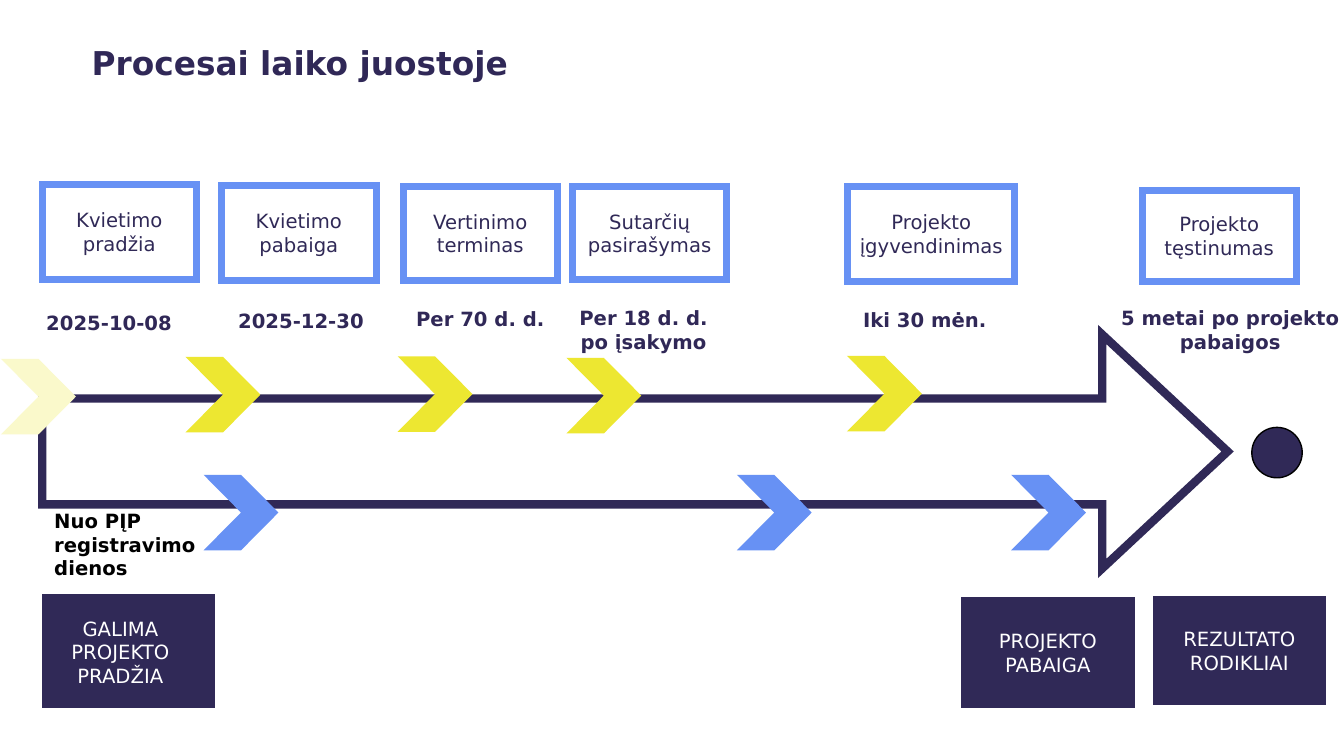
from dataclasses import dataclass

import pptx
import pptx.dml.color
import pptx.enum.shapes
import pptx.enum.text
import pptx.oxml
import pptx.oxml.ns
import pptx.util

Pt = pptx.util.Pt
SHAPES = pptx.enum.shapes.MSO_SHAPE
ALIGN = pptx.enum.text.PP_ALIGN
ANCHOR = pptx.enum.text.MSO_ANCHOR
FONT = "DejaVu Sans"
COLORS = {
    "navy": "302957",
    "ink": "302857",
    "blue": "6791F4",
    "yellow": "EDE731",
    "pale": "FAF9CB",
    "white": "FFFFFF",
    "black": "000000",
}
CHEVRON_WIDTH, CHEVRON_HEIGHT = 53.5, 54


@dataclass
class Box:
    text: str
    left: float
    top: float
    width: float
    height: float


@dataclass
class Label(Box):
    color: str = "ink"
    bold: bool = True
    align: ALIGN = ALIGN.CENTER


@dataclass
class Chevron:
    left: float
    top: float
    color: str


STAGES = [
    Box("Kvietimo pradžia", 30.2, 131.8, 110.2, 67.7),
    Box("Kvietimo pabaiga", 158.4, 132.5, 110.2, 67.7),
    Box("Vertinimo terminas", 288, 133.2, 110.2, 67),
    Box("Sutarčių pasirašymas", 409, 133.2, 110.2, 66.5),
    Box("Projekto įgyvendinimas", 605.5, 133.2, 119.5, 67.7),
    Box("Projekto tęstinumas", 815.8, 136.1, 110.2, 64.8),
]
MILESTONES = [
    Box("", 27.4, 421.9, 128.9, 86.4),
    Box("PROJEKTO PABAIGA", 684, 424.1, 128.9, 84.2),
    Box("REZULTATO RODIKLIAI", 820.8, 423.4, 128.9, 82.8),
]
LABELS = [
    Label("2025-10-08", 25.9, 218.9, 123.1, 24.5, align=ALIGN.LEFT),
    Label("2025-12-30", 153.4, 217.4, 123.1, 24.5),
    Label("Per 70 d. d.", 285.1, 216, 115.9, 24.5),
    Label("Per 18 d. d. po įsakymo", 404.6, 215.3, 110.2, 41),
    Label("Iki 30 mėn.", 605.5, 216.7, 110.2, 24.5),
    Label("5 metai po projekto pabaigos", 787.7, 215.3, 182.2, 41),
    Label("Nuo PĮP registravimo dienos", 31.7, 360, 146.9, 58.3, "black", align=ALIGN.LEFT),
    Label("GALIMA PROJEKTO PRADŽIA", 30.2, 437, 111.6, 58.3, "white", bold=False),
]
CHEVRONS = [
    Chevron(0.7, 256.3, "pale"),
    Chevron(132.5, 254.9, "yellow"),
    Chevron(284, 254.5, "yellow"),
    Chevron(404.6, 255.6, "yellow"),
    Chevron(605, 254.2, "yellow"),
    *(Chevron(left, 339.1, "blue") for left in (145.4, 526.3, 722.2)),
]


def rgb(color: str) -> pptx.dml.color.RGBColor:
    return pptx.dml.color.RGBColor.from_string(COLORS[color])


def write(frame, text: str, color: str, bold: bool = False,
          align: ALIGN = ALIGN.CENTER, size: float = 14) -> None:
    frame.word_wrap = True
    para = frame.paragraphs[0]
    para.text = text
    para.alignment = align
    para.font.name = FONT
    para.font.size = Pt(size)
    para.font.bold = bold
    para.font.color.rgb = rgb(color)


def add_shape(page, kind: SHAPES, left: float, top: float, width: float, height: float,
              fill: str, line: str = "", weight: float = 0):
    shape = page.shapes.add_shape(kind, Pt(left), Pt(top), Pt(width), Pt(height))
    shape.shadow.inherit = False
    shape.fill.solid()
    shape.fill.fore_color.rgb = rgb(fill)
    if line:
        shape.line.color.rgb = rgb(line)
        shape.line.width = Pt(weight)
        # Sharp outline corners
        miter = pptx.oxml.parse_xml(f'<a:miter {pptx.oxml.ns.nsdecls("a")} lim="800000"/>')
        shape.line.fill._xPr.append(miter)
    else:
        shape.line.fill.background()
    return shape


def add_box(page, box: Box, fill: str, line: str, color: str) -> None:
    shape = add_shape(page, SHAPES.ROUNDED_RECTANGLE, box.left, box.top,
                      box.width, box.height, fill, line, 5)
    shape.adjustments[0] = 0
    if box.text:
        shape.text_frame.vertical_anchor = ANCHOR.MIDDLE
        write(shape.text_frame, box.text, color)


def add_label(page, label: Label) -> None:
    box = page.shapes.add_textbox(Pt(label.left), Pt(label.top), Pt(label.width), Pt(label.height))
    write(box.text_frame, label.text, label.color, label.bold, label.align)


def main() -> None:
    deck = pptx.Presentation()
    deck.slide_width, deck.slide_height = Pt(960), Pt(540)
    page = deck.slides.add_slide(deck.slide_layouts[5])

    # Title
    title = page.shapes.title
    title.left, title.top, title.width, title.height = Pt(58.3), Pt(24.5), Pt(764), Pt(40.3)
    title.text_frame.vertical_anchor = ANCHOR.MIDDLE
    write(title.text_frame, "Procesai laiko juostoje", "ink", True, ALIGN.LEFT, 23.4)

    # Timeline arrow and its end point
    arrow = add_shape(page, SHAPES.RIGHT_ARROW, 30.2, 239, 846.7, 167, "white", "navy", 6)
    arrow.adjustments[0], arrow.adjustments[1] = 0.453, 0.536
    add_shape(page, SHAPES.FLOWCHART_CONNECTOR, 894.2, 305.3, 36, 36, "navy", "black", 1)

    # Stages, milestones and markers
    for stage in STAGES:
        add_box(page, stage, "white", "blue", "navy")
    for milestone in MILESTONES:
        add_box(page, milestone, "navy", "white", "white")
    for chevron in CHEVRONS:
        add_shape(page, SHAPES.CHEVRON, chevron.left, chevron.top,
                  CHEVRON_WIDTH, CHEVRON_HEIGHT, chevron.color)

    # Dates and captions
    for label in LABELS:
        add_label(page, label)

    deck.save("out.pptx")


if __name__ == "__main__":
    main()
